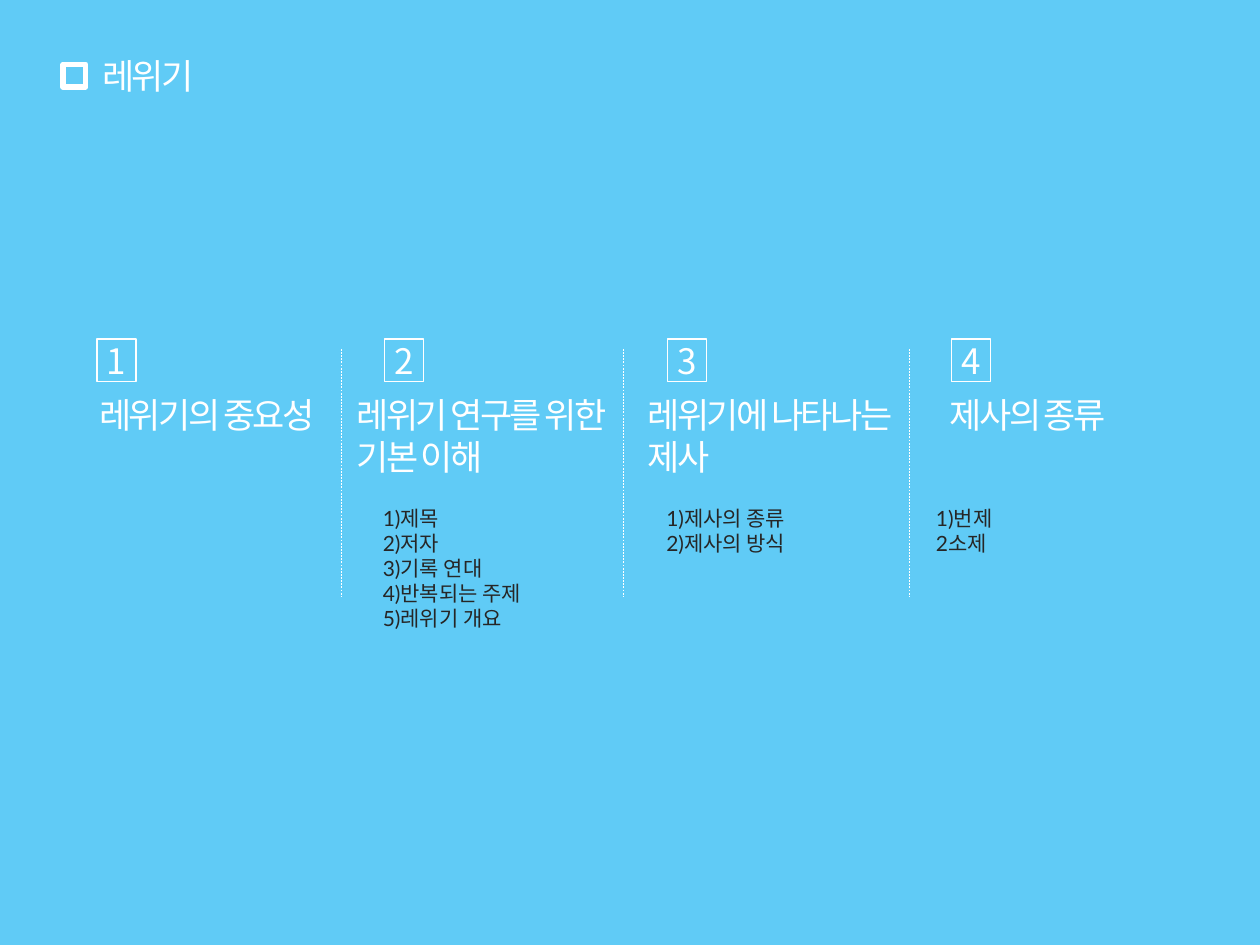
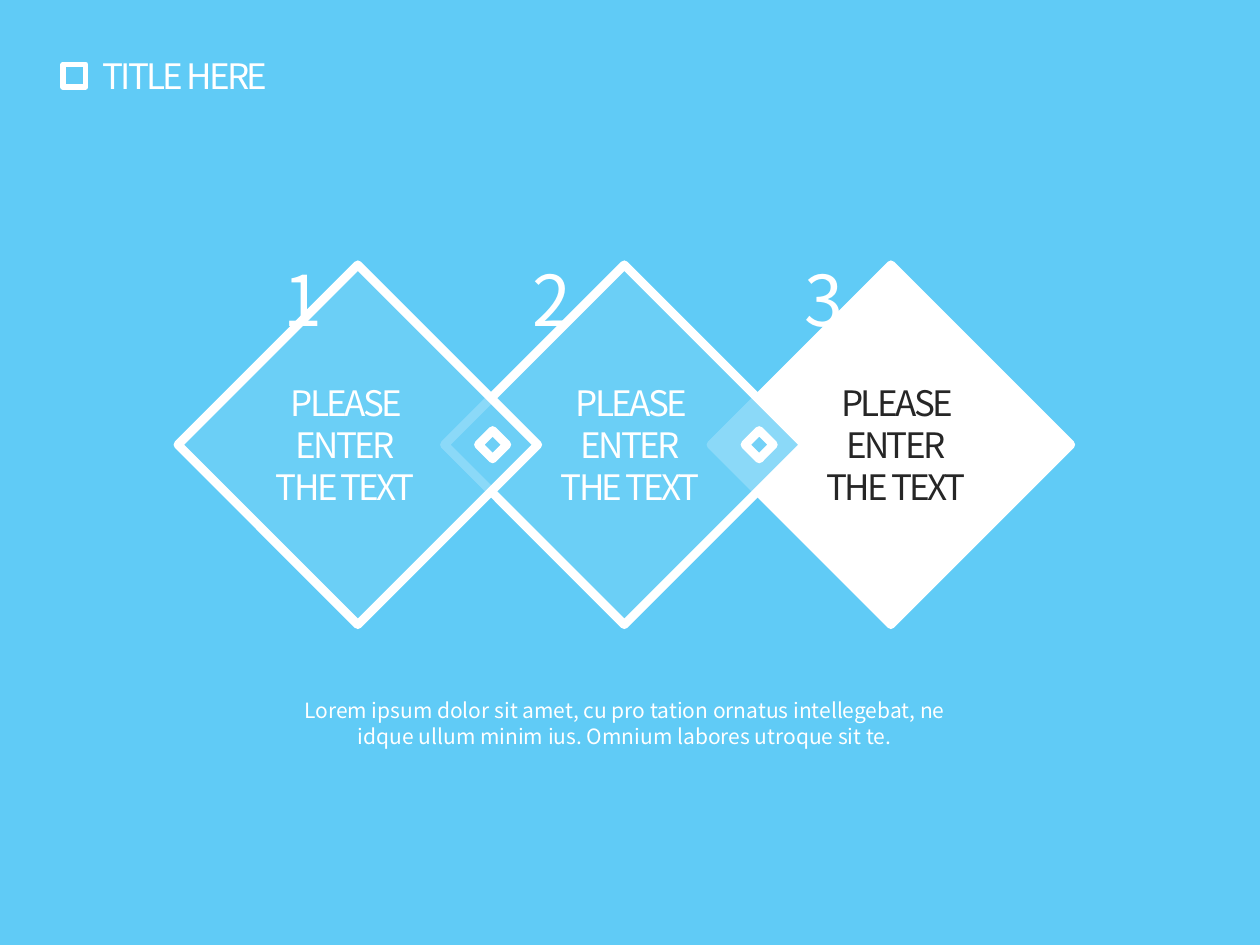
from dataclasses import dataclass

from lxml import etree
from pptx import Presentation
from pptx.dml.color import RGBColor
from pptx.enum.dml import MSO_LINE
from pptx.enum.shapes import MSO_CONNECTOR, MSO_SHAPE
from pptx.enum.text import MSO_ANCHOR, MSO_AUTO_SIZE, PP_ALIGN
from pptx.oxml.ns import qn
from pptx.shapes.autoshape import Shape
from pptx.slide import Slide
from pptx.util import Pt

RECTANGLE = MSO_SHAPE.RECTANGLE
STRAIGHT = MSO_CONNECTOR.STRAIGHT
DASH = MSO_LINE.DASH
LEFT, CENTER = PP_ALIGN.LEFT, PP_ALIGN.CENTER
TOP = MSO_ANCHOR.TOP
GROW, FIXED = MSO_AUTO_SIZE.SHAPE_TO_FIT_TEXT, MSO_AUTO_SIZE.NONE

COLORS = {"sky": "60CBF6", "pale": "6ED0F7", "white": "FFFFFF", "ink": "262626"}
KOREAN, LATIN = "Noto Sans CJK KR", "Lato"


@dataclass(frozen=True)
class Style:
    size: float
    color: str = "white"
    font: str = KOREAN
    align: PP_ALIGN = LEFT
    tracking: float = 0


@dataclass(frozen=True)
class Box:
    left: float
    top: float
    width: float
    height: float

    def lengths(self) -> tuple:
        return Pt(self.left), Pt(self.top), Pt(self.width), Pt(self.height)


@dataclass(frozen=True)
class Chapter:
    number_left: float
    heading_left: float
    heading_width: float
    heading: str
    topics_left: float = 0
    topics: tuple[str, ...] = ()


@dataclass(frozen=True)
class Step:
    number_left: float
    label_left: float
    solid: bool = False


HEADING = Style(20, tracking=-1.5)
CHAPTER_NUMBER = Style(20, align=CENTER)
TOPIC = Style(12, "ink", LATIN)
STEP_NUMBER = Style(40, align=CENTER)
STEP_LABEL = Style(20, align=CENTER, tracking=-1.5)
SOLID_LABEL = Style(20, "ink", align=CENTER, tracking=-1.5)
CAPTION = Style(12, align=CENTER)

CHAPTERS = (
    Chapter(55.44, 49.68, 140.4, "레위기의 중요성"),
    Chapter(219.6, 196.56, 162, "레위기 연구를 위한\n기본 이해", 211.68,
            ("1)제목", "2)저자", "3)기록 연대", "4)반복되는 주제", "5)레위기 개요")),
    Chapter(381.6, 362.88, 158.4, "레위기에 나타나는\n제사", 373.68,
            ("1)제사의 종류", "2)제사의 방식")),
    Chapter(543.6, 535.68, 105.84, "제사의 종류", 527.76, ("1)번제", "2소제")),
)
DIVIDERS = (195.12, 356.4, 519.84)

STEPS = (Step(144.72, 140.4), Step(287.28, 303.12), Step(442.8, 455.04, True))
DIAMOND_LEFT, DIAMOND_PITCH = 131.76, 152.3


def rgb(name: str) -> RGBColor:
    return RGBColor.from_string(COLORS[name])


def write(shape: Shape, text: str, style: Style) -> None:
    shape.text_frame.text = text
    for paragraph in shape.text_frame.paragraphs:
        paragraph.alignment = style.align
        for run in paragraph.runs:
            run.font.size = Pt(style.size)
            run.font.name = style.font
            run.font.color.rgb = rgb(style.color)
            properties = run.font._element
            etree.SubElement(properties, qn("a:ea")).set("typeface", KOREAN)
            if style.tracking:
                properties.set("spc", str(round(style.tracking * 100)))


def add_text(shapes, box: Box, text: str, style: Style, wrap: bool = True) -> None:
    textbox = shapes.add_textbox(*box.lengths())
    textbox.text_frame.word_wrap = wrap
    textbox.text_frame.auto_size = GROW
    write(textbox, text, style)


def add_frame(shapes, box: Box, weight: float, fill: str = "",
              opacity: int = 100, rotation: float = 0) -> Shape:
    frame = shapes.add_shape(RECTANGLE, *box.lengths())
    frame.shadow.inherit = False
    frame.rotation = rotation
    frame.line.color.rgb = rgb("white")
    frame.line.width = Pt(weight)
    if fill:
        frame.fill.solid()
        frame.fill.fore_color.rgb = rgb(fill)
        if opacity < 100:
            color = frame.fill._xPr.find(".//" + qn("a:srgbClr"))
            etree.SubElement(color, qn("a:alpha")).set("val", str(opacity * 1000))
    else:
        frame.fill.background()
    return frame


def add_titled_slide(deck, title: str) -> Slide:
    slide = deck.slides.add_slide(deck.slide_layouts.get_by_name("Title Only"))
    add_frame(slide.shapes, Box(36, 36.72, 13, 13), 3)
    heading = slide.shapes.title
    heading.left, heading.top, heading.width, heading.height = Box(
        51.12, 30.24, 617.76, 53.28).lengths()
    heading.text_frame.vertical_anchor = TOP
    heading.text_frame.auto_size = FIXED
    write(heading, title, HEADING)
    heading.text_frame.paragraphs[0].line_spacing = 0.9
    return slide


def add_chapter(slide: Slide, number: int, chapter: Chapter) -> None:
    badge = add_frame(slide.shapes, Box(chapter.number_left, 193.68, 22.32, 24.48), 0.75)
    frame = badge.text_frame
    frame.margin_left = frame.margin_top = frame.margin_right = frame.margin_bottom = 0
    frame.auto_size = GROW
    write(badge, str(number), CHAPTER_NUMBER)
    lines = chapter.heading.count("\n") + 1
    add_text(slide.shapes, Box(chapter.heading_left, 221.04, chapter.heading_width,
                               7.5 + 24 * lines), chapter.heading, HEADING, False)
    if chapter.topics:
        height = 7 + 14.5 * len(chapter.topics)
        add_text(slide.shapes, Box(chapter.topics_left, 285.12, 136.8, height),
                 "\n".join(chapter.topics), TOPIC)


def add_divider(slide: Slide, x: float) -> None:
    divider = slide.shapes.add_connector(STRAIGHT, Pt(x), Pt(199.44), Pt(x), Pt(341))
    divider.line.color.rgb = rgb("white")
    divider.line.width = Pt(0.25)
    divider.line.dash_style = DASH
    etree.SubElement(divider._element.spPr, qn("a:effectLst"))


def add_step(slide: Slide, index: int, step: Step) -> None:
    shapes = slide.shapes.add_group_shape().shapes
    left = DIAMOND_LEFT + index * DIAMOND_PITCH
    fill, opacity = ("white", 100) if step.solid else ("pale", 80)
    add_frame(shapes, Box(left, 181.44, 145.44, 145.44), 5, fill, opacity, 45)
    if not step.solid:
        add_frame(shapes, Box(left + 144, 248.4, 11.52, 11.52), 5, fill, opacity, 45)
    add_text(shapes, Box(step.number_left, 143.28, 56.16, 55.44),
             str(index + 1), STEP_NUMBER)


def build_contents(deck) -> None:
    slide = add_titled_slide(deck, "레위기")
    for number, chapter in enumerate(CHAPTERS, 1):
        add_chapter(slide, number, chapter)
    for x in DIVIDERS:
        add_divider(slide, x)


def build_steps(deck) -> None:
    slide = add_titled_slide(deck, "TITLE HERE")
    for index, step in reversed(list(enumerate(STEPS))):
        add_step(slide, index, step)
    for step in STEPS:
        add_text(slide.shapes, Box(step.label_left, 214.56, 113.76, 79.92),
                 "PLEASE ENTER\nTHE TEXT", SOLID_LABEL if step.solid else STEP_LABEL)
    add_text(slide.shapes, Box(164.88, 395.28, 384.48, 36),
             "Lorem ipsum dolor sit amet, cu pro tation ornatus intellegebat, ne "
             "idque ullum minim ius. Omnium labores utroque sit te.", CAPTION)


def main() -> None:
    deck = Presentation()
    deck.slide_width, deck.slide_height = Pt(720), Pt(540)
    background = deck.slide_master.background.fill
    background.solid()
    background.fore_color.rgb = rgb("sky")
    build_contents(deck)
    build_steps(deck)
    deck.save("out.pptx")


if __name__ == "__main__":
    main()
